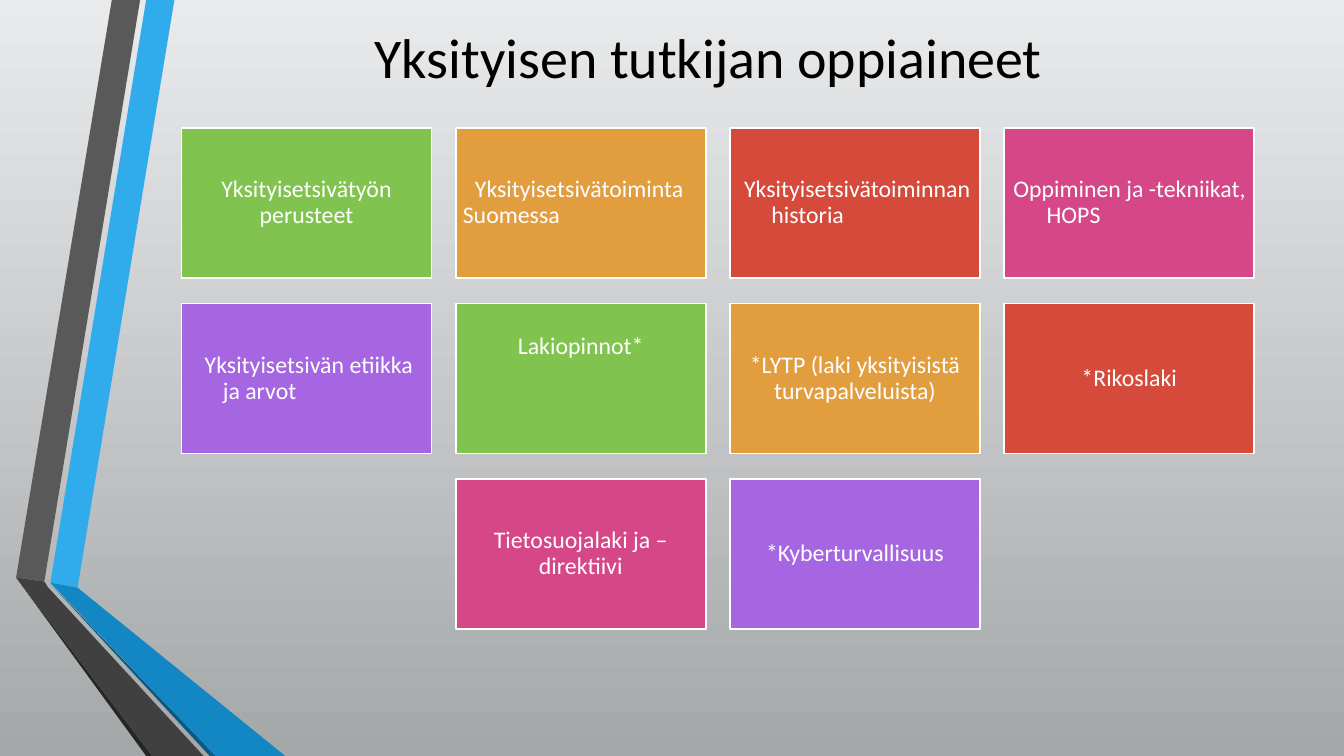
from itertools import cycle

from pptx import Presentation
from pptx.dml.color import RGBColor
from pptx.enum.shapes import MSO_SHAPE
from pptx.enum.text import MSO_ANCHOR, PP_ALIGN
from pptx.util import Inches, Pt

FONT = "Calibri"
BLACK = RGBColor(0x00, 0x00, 0x00)
WHITE = RGBColor(0xFF, 0xFF, 0xFF)
BACKGROUND_TOP = RGBColor(0xE9, 0xEA, 0xEB)
BACKGROUND_BOTTOM = RGBColor(0xA5, 0xA8, 0xA9)
SKY = RGBColor(0x30, 0xAC, 0xEC)
BLUE = RGBColor(0x12, 0x87, 0xC3)
NAVY = RGBColor(0x0C, 0x5A, 0x82)
GREY = RGBColor(0x59, 0x59, 0x59)
DARK_GREY = RGBColor(0x40, 0x40, 0x40)
CHARCOAL = RGBColor(0x26, 0x26, 0x26)
GREEN = RGBColor(0x80, 0xC3, 0x4F)
ORANGE = RGBColor(0xE2, 0x9D, 0x3E)
RED = RGBColor(0xD6, 0x4A, 0x3B)
PINK = RGBColor(0xD6, 0x47, 0x87)
PURPLE = RGBColor(0xA6, 0x66, 0xE1)
CARD_COLORS = (GREEN, ORANGE, RED, PINK, PURPLE)

RIBBONS = [
    (SKY, [(0.5, 5.78), (0.77, 5.83), (1.73, 0), (1.45, 0)]),
    (GREY, [(1.39, 0), (1.11, 0), (0.16, 5.73), (0.44, 5.77)]),
    (CHARCOAL, [(0.16, 5.73), (1.45, 7.5), (1.51, 7.5)]),
    (NAVY, [(0.5, 5.79), (2.08, 7.5), (2.14, 7.5)]),
    (BLUE, [(0.5, 5.78), (2.14, 7.5), (2.83, 7.5), (0.77, 5.83)]),
    (DARK_GREY, [(2.02, 7.5), (0.48, 5.83), (0.44, 5.77), (0.16, 5.73), (1.51, 7.5)]),
]

SUBJECT_ROWS = [
    [
        "Yksityisetsivätyön perusteet",
        "Yksityisetsivätoiminta Suomessa",
        "Yksityisetsivätoiminnan historia",
        "Oppiminen ja -tekniikat, HOPS",
    ],
    [
        "Yksityisetsivän etiikka ja arvot",
        "Lakiopinnot*",
        "*LYTP (laki yksityisistä turvapalveluista)",
        "*Rikoslaki",
    ],
    ["Tietosuojalaki ja –direktiivi", "*Kyberturvallisuus"],
]
# Left edges, in inches, of the first and second line of the left-aligned cards
LINE_STARTS = {
    "Yksityisetsivätoiminta Suomessa": (0.12, 0),
    "Yksityisetsivätoiminnan historia": (0.07, 0.34),
    "Oppiminen ja -tekniikat, HOPS": (0.02, 0.35),
    "Yksityisetsivän etiikka ja arvot": (0.16, 0.34),
}
RAISED_SUBJECT = "Lakiopinnot*"

COLUMNS = 4
GRID_LEFT, GRID_TOP = 1.8, 1.27
CARD_WIDTH, CARD_HEIGHT = 2.48, 1.49
COLUMN_GAP, ROW_GAP = 0.24, 0.25
CARD_MARGIN = 0.07


def paint_background(slide):
    fill = slide.background.fill
    fill.gradient()
    fill.gradient_angle = 270
    for stop, color, position in zip(
        fill.gradient_stops, (BACKGROUND_TOP, BACKGROUND_BOTTOM), (0, 1)
    ):
        stop.color.rgb = color
        stop.position = position


def add_ribbon(slide, color, corners):
    start, *others = [(Inches(x), Inches(y)) for x, y in corners]
    outline = slide.shapes.build_freeform(*start)
    outline.add_line_segments(others, close=True)
    ribbon = outline.convert_to_shape()
    ribbon.shadow.inherit = False
    ribbon.fill.solid()
    ribbon.fill.fore_color.rgb = color
    ribbon.line.fill.background()


def write(frame, text, size, color):
    """Fill the frame with one centred paragraph and return that paragraph."""
    frame.word_wrap = True
    frame.vertical_anchor = MSO_ANCHOR.MIDDLE
    frame.text = text
    paragraph = frame.paragraphs[0]
    paragraph.alignment = PP_ALIGN.CENTER
    font = paragraph.runs[0].font
    font.name, font.size, font.color.rgb = FONT, Pt(size), color
    return paragraph


def start_lines_at(paragraph, first, second):
    paragraph.alignment = PP_ALIGN.LEFT
    properties = paragraph._p.get_or_add_pPr()
    properties.set("marL", str(Inches(second)))
    properties.set("indent", str(Inches(first - second)))


def add_title(slide, text):
    title = slide.shapes.add_textbox(Inches(1.7), Inches(0), Inches(10.65), Inches(1.12))
    write(title.text_frame, text, 40, BLACK)


def add_card(slide, subject, left, top, color):
    card = slide.shapes.add_shape(
        MSO_SHAPE.RECTANGLE,
        Inches(left), Inches(top), Inches(CARD_WIDTH), Inches(CARD_HEIGHT),
    )
    card.shadow.inherit = False
    card.fill.solid()
    card.fill.fore_color.rgb = color
    card.line.color.rgb = WHITE
    card.line.width = Pt(1.25)

    frame = card.text_frame
    frame.margin_left = frame.margin_right = Inches(CARD_MARGIN)
    frame.margin_top = frame.margin_bottom = Inches(CARD_MARGIN)
    if subject == RAISED_SUBJECT:
        frame.margin_bottom = Inches(0.69)
    paragraph = write(frame, subject, 17, WHITE)
    paragraph.line_spacing = 0.9
    if subject in LINE_STARTS:
        start_lines_at(paragraph, *LINE_STARTS[subject])


def add_subject_grid(slide):
    """Lay the cards out in rows, each row centred on the full grid width."""
    colors = cycle(CARD_COLORS)
    for row, subjects in enumerate(SUBJECT_ROWS):
        first_column = (COLUMNS - len(subjects)) / 2
        top = GRID_TOP + row * (CARD_HEIGHT + ROW_GAP)
        for column, subject in enumerate(subjects, 1):
            left = GRID_LEFT + (first_column + column - 1) * (CARD_WIDTH + COLUMN_GAP)
            add_card(slide, subject, left, top, next(colors))


def main():
    presentation = Presentation()
    presentation.slide_width = Inches(13.33)
    presentation.slide_height = Inches(7.5)
    slide = presentation.slides.add_slide(presentation.slide_layouts[6])
    paint_background(slide)
    for color, corners in RIBBONS:
        add_ribbon(slide, color, corners)
    add_title(slide, "Yksityisen tutkijan oppiaineet")
    add_subject_grid(slide)
    presentation.save("out.pptx")


if __name__ == "__main__":
    main()
